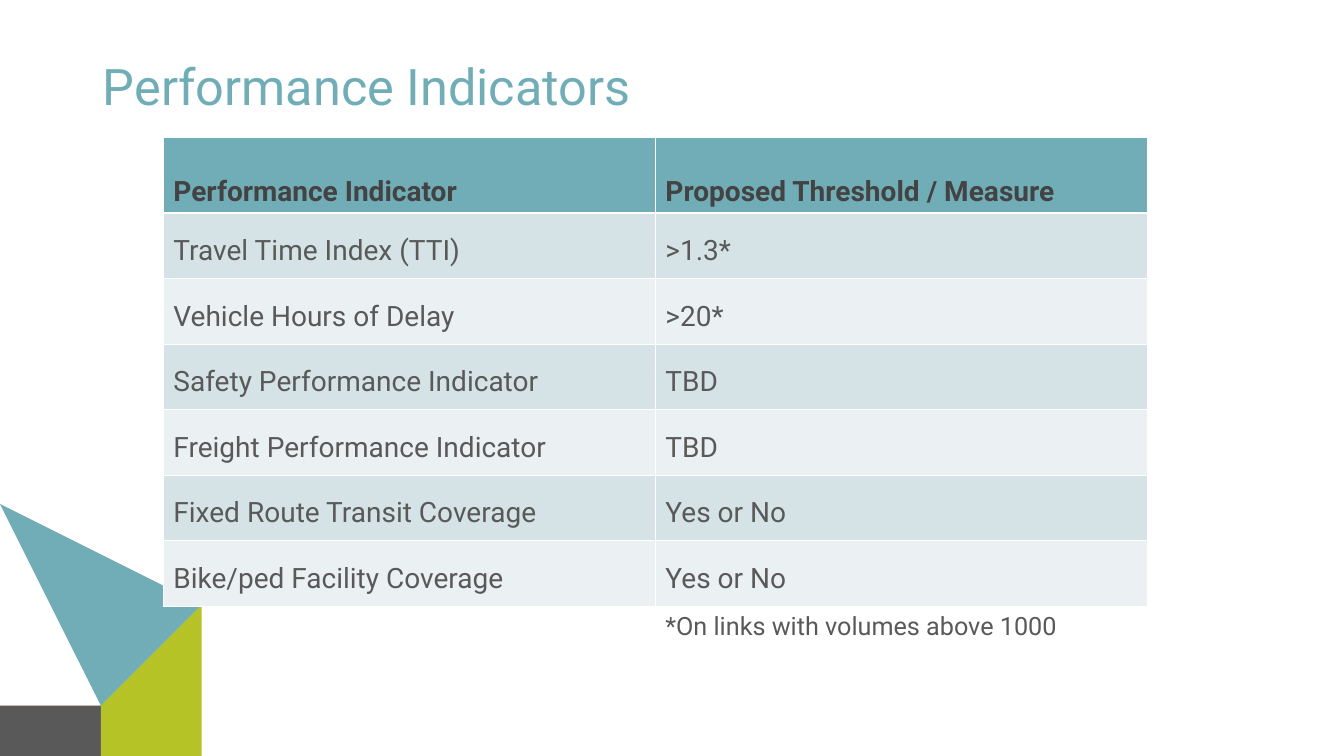
import pptx
import pptx.dml.color
import pptx.enum.text
import pptx.util

Inches = pptx.util.Inches
TEAL, GREY = "71ADB7", "595959"

# A pair is a corner; four numbers are a curve: second control, then end.
TILES = [
    (GREY, [(0.98, 7.5), (0.84, 7.24), (0.69, 6.97, 0.42, 7.12),
            (0, 7.34), (0, 7.5)]),
    ("B5C327", [(1.62, 6.45), (1.05, 6.77), (0.78, 6.92, 0.93, 7.2),
                (1.09, 7.5), (1.69, 7.5), (1.85, 6.61),
                (1.9, 6.3, 1.62, 6.45)]),
    ("ED6A5A", [(0.5, 6.6), (0, 5.68), (0, 7.24), (0.37, 7.03),
                (0.65, 6.88, 0.5, 6.6)]),
    (TEAL, [(1.01, 6.68), (1.55, 6.38), (1.82, 6.23, 1.56, 6.05),
            (0, 4.93), (0, 5.48), (0.58, 6.56), (0.73, 6.83, 1.01, 6.68)]),
]

ROWS = [
    ("Performance Indicator", "Proposed Threshold / Measure"),
    ("Travel Time Index (TTI)", ">1.3*"),
    ("Vehicle Hours of Delay", ">20*"),
    ("Safety Performance Indicator", "TBD"),
    ("Freight Performance Indicator", "TBD"),
    ("Fixed Route Transit Coverage", "Yes or No"),
    ("Bike/ped Facility Coverage", "Yes or No"),
]


def rgb(code):
    return pptx.dml.color.RGBColor.from_string(code)


def paint(item, code):
    item.fill.solid()
    item.fill.fore_color.rgb = rgb(code)


def write(frame, text, size=20, color=GREY, bold=False, space=0.9,
          anchor=None):
    frame.word_wrap = True
    if anchor is not None:
        frame.vertical_anchor = anchor
    para = frame.paragraphs[0]
    para.alignment = pptx.enum.text.PP_ALIGN.LEFT
    para.line_spacing = space
    run = para.add_run()
    run.text = text
    run.font.name = "Roboto"
    run.font.size = pptx.util.Pt(size)
    run.font.bold = bold
    run.font.color.rgb = rgb(color)


def place(shape, left, top, width, height):
    shape.left, shape.top = Inches(left), Inches(top)
    shape.width, shape.height = Inches(width), Inches(height)


def trace(steps, count=16):
    """Turn corners and curves into a list of points."""
    points = [steps[0]]
    for *bend, x, y in steps[1:]:
        if not bend:
            points.append((x, y))
            continue
        (ax, ay), (bx, by) = points[-1], bend
        for i in range(1, count + 1):
            t = i / count
            # The first control point lies on the start of the curve.
            start, mid, end = (1 - t) ** 2 * (1 + 2 * t), 3 * (1 - t) * t * t, t ** 3
            points.append((start * ax + mid * bx + end * x,
                           start * ay + mid * by + end * y))
    return points


def add_tile(slide, color, steps):
    first, *rest = trace(steps)
    form = slide.shapes.build_freeform(*first, scale=Inches(1))
    form.add_line_segments(rest, close=True)
    tile = form.convert_to_shape()
    tile.shadow.inherit = False
    paint(tile, color)
    tile.line.fill.background()


def add_grid(slide, rows):
    table = slide.shapes.add_table(
        len(rows), 2, Inches(1.62), Inches(1.36), Inches(9.76), Inches(4.65)
    ).table
    for i, row in enumerate(rows):
        head = i == 0
        table.rows[i].height = Inches(0.73 if head else 0.65)
        fill = TEAL if head else ("EBF1F3", "D5E3E6")[i % 2]
        for j, text in enumerate(row):
            cell = table.cell(i, j)
            paint(cell, fill)
            write(cell.text_frame, text, color="434343" if head else GREY,
                  bold=head, space=2.0 if head else 1.5)


def main():
    deck = pptx.Presentation()
    deck.slide_width, deck.slide_height = Inches(13.33), Inches(7.5)
    slide = deck.slides.add_slide(deck.slide_layouts.get_by_name("Title Only"))
    middle = pptx.enum.text.MSO_ANCHOR.MIDDLE

    for color, steps in TILES:
        add_tile(slide, color, steps)

    title = slide.shapes.title
    place(title, 0.92, 0.4, 11.5, 0.97)
    write(title.text_frame, "Performance Indicators", size=36, color=TEAL,
          anchor=middle)

    add_grid(slide, ROWS)

    note = slide.shapes.add_textbox(
        Inches(6.5), Inches(6.01), Inches(5.12), Inches(0.43))
    write(note.text_frame, "*On links with volumes above 1000", size=18,
          anchor=middle)

    deck.save("out.pptx")


if __name__ == "__main__":
    main()
